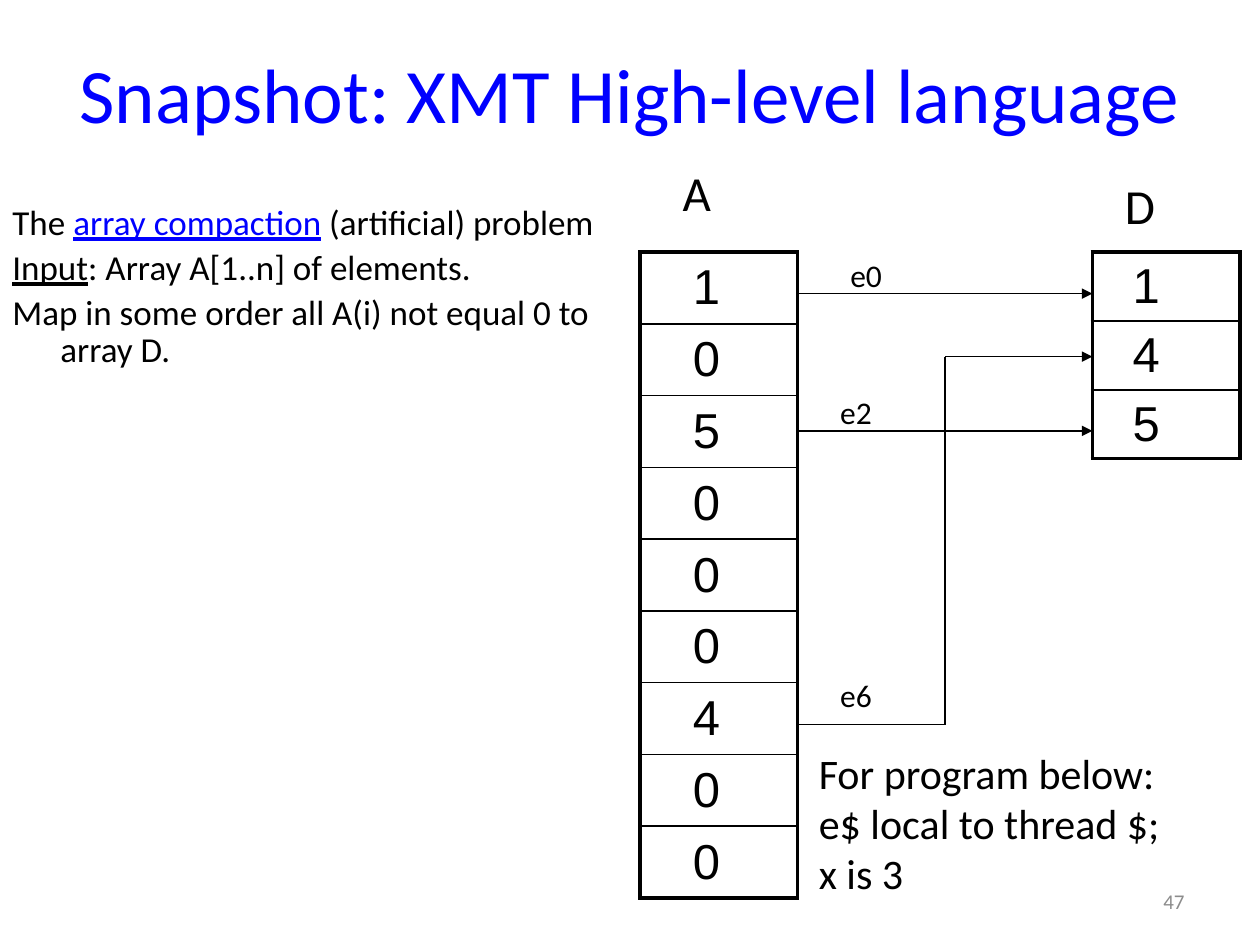
from lxml import etree
from pptx import Presentation
from pptx import util as u
from pptx.dml import color
from pptx.enum import shapes, text
from pptx.oxml import ns

BLACK, BLUE, GREY = "000000", "0000FF", "8C8C8C"


def rgb(hex_code):
    return color.RGBColor.from_string(hex_code)


def add_xml(parent, tag, **attributes):
    return etree.SubElement(parent, ns.qn(tag), attributes)


def write(tf, paragraphs, size=18, font="Calibri", ink=BLACK, align=None,
          hanging=0, line_spacing=None, before=0):
    for i, runs in enumerate(paragraphs):
        p = tf.add_paragraph() if i else tf.paragraphs[0]
        if hanging:
            indent = u.Inches(hanging)
            p_pr = p._p.get_or_add_pPr()
            p_pr.set("marL", str(indent))
            p_pr.set("indent", str(-indent))
        p.alignment = align
        p.line_spacing = line_spacing
        if i and before:
            p.space_before = u.Pt(before)
        for run in [(runs,)] if isinstance(runs, str) else runs:
            words, run_ink, underline = (run + (ink, False)[len(run) - 1:])[:3]
            r = p.add_run()
            r.text = words
            r.font.size = u.Pt(size)
            r.font.name = font
            r.font.color.rgb = rgb(run_ink)
            r.font.underline = underline


class Deck:
    thin, rule, frame = 0.75, 1, 2.25

    def __init__(self, width, height):
        self.prs = Presentation()
        self.prs.slide_width = u.Inches(width)
        self.prs.slide_height = u.Inches(height)
        self.s = self.prs.slides.add_slide(self.prs.slide_layouts[6])

    def text(self, box, paragraphs, wrap=False, middle=False, **fmt):
        tf = self.s.shapes.add_textbox(*map(u.Inches, box)).text_frame
        tf.word_wrap = wrap
        if middle:
            tf.vertical_anchor = text.MSO_ANCHOR.MIDDLE
        write(tf, paragraphs, **fmt)

    def array(self, x, y, width, row_height, values, indent):
        rows = len(values)
        table = self.s.shapes.add_table(
            rows, 1, u.Inches(x), u.Inches(y), u.Inches(width),
            u.Inches(row_height * rows)).table
        table.first_row = table.horz_banding = False
        for i, value in enumerate(values):
            table.rows[i].height = u.Inches(row_height)
            cell = table.cell(i, 0)
            cell.margin_left = u.Inches(indent)
            cell.margin_top = cell.margin_bottom = u.Inches(0.04)
            cell.vertical_anchor = text.MSO_ANCHOR.MIDDLE
            top = self.rule if i else self.frame
            bottom = self.rule if i < rows - 1 else self.frame
            self.borders(cell, L=self.frame, R=self.frame, T=top, B=bottom)
            cell.fill.background()
            write(cell.text_frame, [str(value)], size=28, font="Arial")

    def borders(self, cell, **widths):
        tc_pr = cell._tc.get_or_add_tcPr()
        for side, width in widths.items():
            ln = add_xml(tc_pr, f"a:ln{side}", w=str(u.Pt(width)))
            add_xml(add_xml(ln, "a:solidFill"), "a:srgbClr", val=BLACK)

    def line(self, start, end, arrow=False):
        sp = self.s.shapes.add_connector(
            shapes.MSO_CONNECTOR.STRAIGHT, *map(u.Inches, start + end))
        sp.line.width = u.Pt(self.thin)
        sp.line.color.rgb = rgb(BLACK)
        if arrow:
            add_xml(sp.line._get_or_add_ln(), "a:tailEnd", type="triangle")
        add_xml(sp._element.spPr, "a:effectLst")


def main():
    deck = Deck(10, 7.5)
    deck.text((0, 0.3, 10, 0.87), ["Snapshot: XMT High-level language"],
              wrap=True, middle=True, size=44, ink=BLUE,
              align=text.PP_ALIGN.CENTER)
    deck.text((0, 1.58, 4.92, 5.12), [
        [("The ",), ("array compaction", BLUE, True),
         (" (artificial) problem",)],
        [("Input", BLACK, True), (": Array A[1..n] of elements.",)],
        "Map in some order all A(i) not equal 0 to array D.",
    ], wrap=True, size=20, hanging=0.38, line_spacing=0.9, before=4)

    a_left, a_width, d_left, top = 5.08, 1.25, 8.67, 2
    deck.array(a_left, top, a_width, 0.57, [1, 0, 5, 0, 0, 0, 4, 0, 0], 0.42)
    deck.array(d_left, top, 1.17, 0.53, [1, 4, 5], 0.32)

    a_right, bend = a_left + a_width, 7.5
    for y in (2.33, 3.42):
        deck.line((a_right, y), (d_left, y), arrow=True)
    deck.line((a_right, 5.75), (bend, 5.75))
    deck.line((bend, 5.75), (bend, 2.83))
    deck.line((bend, 2.83), (d_left, 2.83), arrow=True)

    for label, x, y in (("e0", 6.65, 1.98), ("e2", 6.57, 3.07),
                        ("e6", 6.57, 5.32)):
        deck.text((x, y, 0.45, 0.37), [label])
    for label, x, y in (("A", 5.32, 1.24), ("D", 8.83, 1.34)):
        deck.text((x, y, 0.47, 0.57), [label], size=28)
    deck.text((6.4, 5.88, 3.19, 1.3),
              ["For program below:", "e$ local to thread $;", "x is 3"],
              size=24)
    deck.text((7.17, 6.95, 2.33, 0.4), ["47"], wrap=True, middle=True,
              size=12, ink=GREY, align=text.PP_ALIGN.RIGHT)
    deck.prs.save("out.pptx")


if __name__ == "__main__":
    main()
